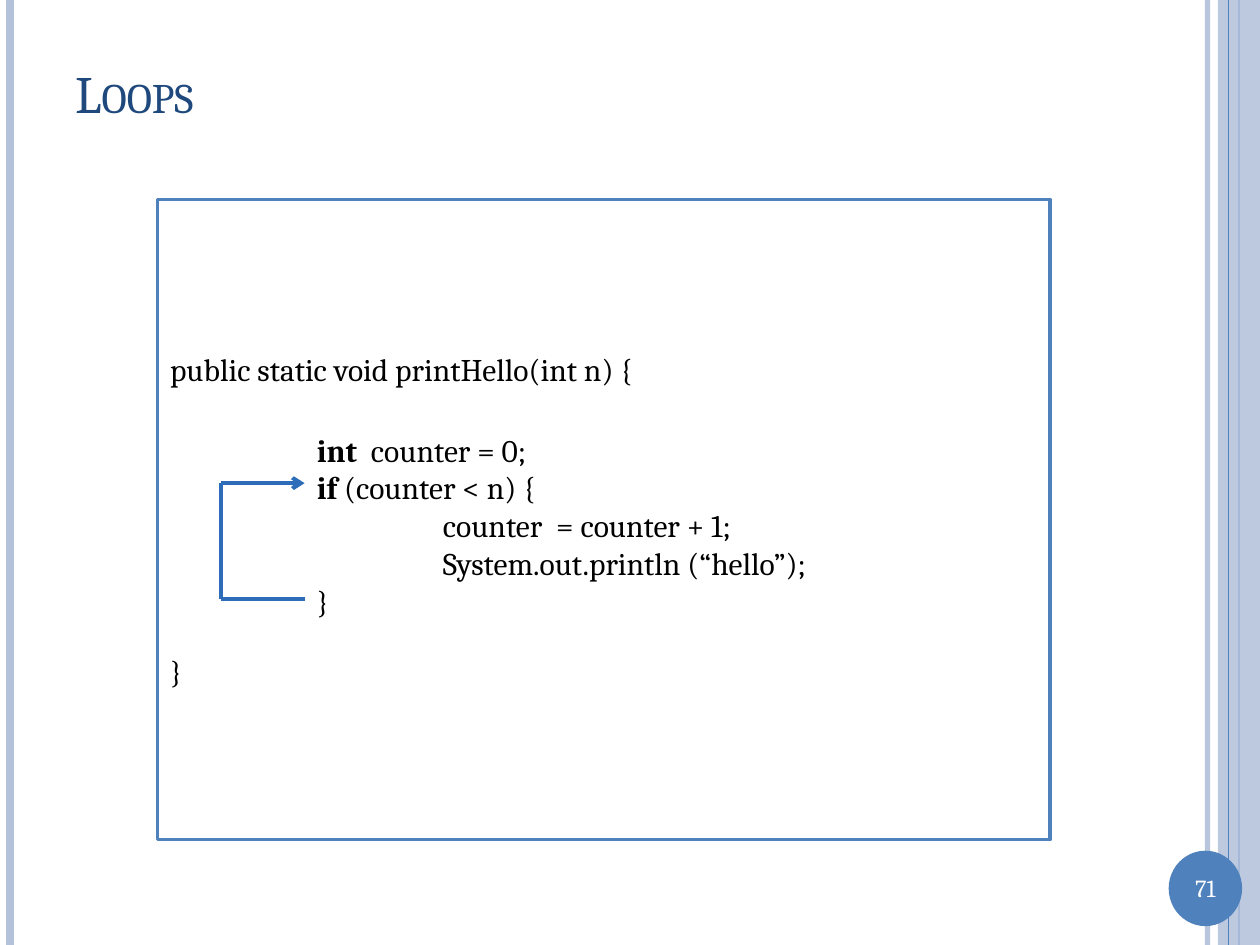
import pptx
import pptx.dml.color
import pptx.enum.shapes
import pptx.enum.text
import pptx.oxml.ns
import pptx.util
from lxml import etree
from pptx.util import Cm

RGBColor = pptx.dml.color.RGBColor
SHAPE = pptx.enum.shapes.MSO_SHAPE
ALIGN = pptx.enum.text.PP_ALIGN
ANCHOR = pptx.enum.text.MSO_ANCHOR

BLUE = RGBColor(0x4F, 0x81, 0xBD)
PALE_BLUE = RGBColor(0xB3, 0xC1, 0xDB)
ARROW_BLUE = RGBColor(0x2C, 0x6C, 0xB9)
NAVY = RGBColor(0x1F, 0x49, 0x7D)
WHITE = RGBColor(0xFF, 0xFF, 0xFF)
BLACK = RGBColor(0x00, 0x00, 0x00)

WIDTH, HEIGHT = 25.4, 19.05
CODE_INDENT = 2.54


def add_child(parent, tag, **attributes):
    return etree.SubElement(parent, pptx.oxml.ns.qn(tag), **attributes)


def set_alpha(element, percent):
    """Make the first solid colour inside element partly transparent."""
    colour = next(element.iter(pptx.oxml.ns.qn("a:srgbClr")))
    add_child(colour, "a:alpha", val=str(percent * 1000))


def write(frame, lines, font="Cambria", size=18, colour=BLACK,
          align=ALIGN.LEFT, small_caps=False, gap=0, levels=()):
    """Fill frame with lines, each a list of (text, bold) runs, gap points apart.

    levels gives the code indent level of each line.
    """
    frame.word_wrap = True
    frame.vertical_anchor = ANCHOR.MIDDLE
    for number, line in enumerate(lines):
        paragraph = frame.add_paragraph() if number else frame.paragraphs[0]
        paragraph.alignment = align
        if levels:
            properties = paragraph._p.get_or_add_pPr()
            properties.set("marL", str(Cm(CODE_INDENT * levels[number])))
            properties.set("indent", "0")
        if number and gap:
            paragraph.space_before = pptx.util.Pt(gap)
        for text, bold in line:
            run = paragraph.add_run()
            run.text = text
            run.font.name = font
            run.font.size = pptx.util.Pt(size)
            run.font.bold = bold
            run.font.color.rgb = colour
            if small_caps:
                run.font._element.set("cap", "small")


class SlideBuilder:
    """Holds the line style and the slide being filled; lengths are in cm."""

    def __init__(self, slide, line_colour, line_width):
        self.shapes = slide.shapes
        self.line_colour = line_colour
        self.line_width = line_width

    def line(self, start, end, colour=None, width=None, alpha=None, arrow=False):
        connector = self.shapes.add_connector(
            pptx.enum.shapes.MSO_CONNECTOR.STRAIGHT,
            *(Cm(value) for value in (*start, *end)))
        connector.line.color.rgb = colour or self.line_colour
        connector.line.width = pptx.util.Pt(width or self.line_width)
        properties = connector._element.spPr
        if alpha:
            set_alpha(properties, alpha)
        if arrow:
            add_child(connector.line._get_or_add_ln(), "a:tailEnd", type="arrow")
        add_child(properties, "a:effectLst")

    def shape(self, kind, box, fill, outline=None, width=2, alpha=None):
        shape = self.shapes.add_shape(kind, *map(Cm, box))
        shape.shadow.inherit = False
        shape.fill.solid()
        shape.fill.fore_color.rgb = fill
        if alpha:
            set_alpha(shape._element.spPr, alpha)
        if outline:
            shape.line.color.rgb = outline
            shape.line.width = pptx.util.Pt(width)
        else:
            shape.line.fill.background()
        return shape

    def text(self, box, lines, **style):
        write(self.shapes.add_textbox(*map(Cm, box)).text_frame, lines, **style)


def draw_frame(builder):
    """Draw the stripes at both edges and the page number."""
    def stripe(x, colour, width, alpha=None):
        builder.line((x, 0), (x, HEIGHT), colour, width, alpha)

    stripe(24.34, PALE_BLUE, 3, alpha=93)
    stripe(0.21, PALE_BLUE, 4.5)
    stripe(24.98, BLUE, 1.5)
    builder.shape(SHAPE.RECTANGLE, (24.55, 0, 0.85, HEIGHT), PALE_BLUE, alpha=87)
    stripe(24.77, BLUE, 0.75)
    builder.shape(SHAPE.OVAL, (23.56, 17.15, 1.48, 1.52), BLUE)
    builder.text((23.56, 17.46, 1.48, 0.86), [[("71", False)]],
                 size=14, colour=WHITE, align=ALIGN.CENTER)


def draw_method(builder):
    """Draw the code box, the loop-back arrow and the method body."""
    code_box = builder.shape(SHAPE.RECTANGLE, (3.18, 4.02, 17.99, 12.91), WHITE, BLUE)
    signature = [("public static void printHello(int n) {", False)]
    write(code_box.text_frame, [signature, [("}", False)]], gap=151)

    body_x, loop_x = 6.14, 4.45
    loop_start, loop_end = 9.74, 12.07
    builder.line((body_x, loop_end), (loop_x, loop_end))
    builder.line((loop_x, loop_start), (body_x, loop_start), arrow=True)
    builder.line((loop_x, loop_end), (loop_x, loop_start))

    body = [
        [("int", True), ("  counter = 0;", False)],
        [("if", True), (" (counter < n) {", False)],
        [("counter  = counter + 1;", False)],
        [("System.out.println (“hello”);", False)],
        [("}", False)],
    ]
    builder.text((3.6, 8.47, 17.15, 4.23), body, levels=(1, 1, 2, 2, 1))


def main():
    deck = pptx.Presentation()
    deck.slide_width, deck.slide_height = Cm(WIDTH), Cm(HEIGHT)
    slide = deck.slides.add_slide(deck.slide_layouts[6])
    builder = SlideBuilder(slide, ARROW_BLUE, 2.25)
    draw_frame(builder)
    builder.text((1.27, 0.76, 22.01, 2.2), [[("Loops", False)]],
                 size=30, colour=NAVY, small_caps=True)
    draw_method(builder)
    deck.save("out.pptx")


if __name__ == "__main__":
    main()
